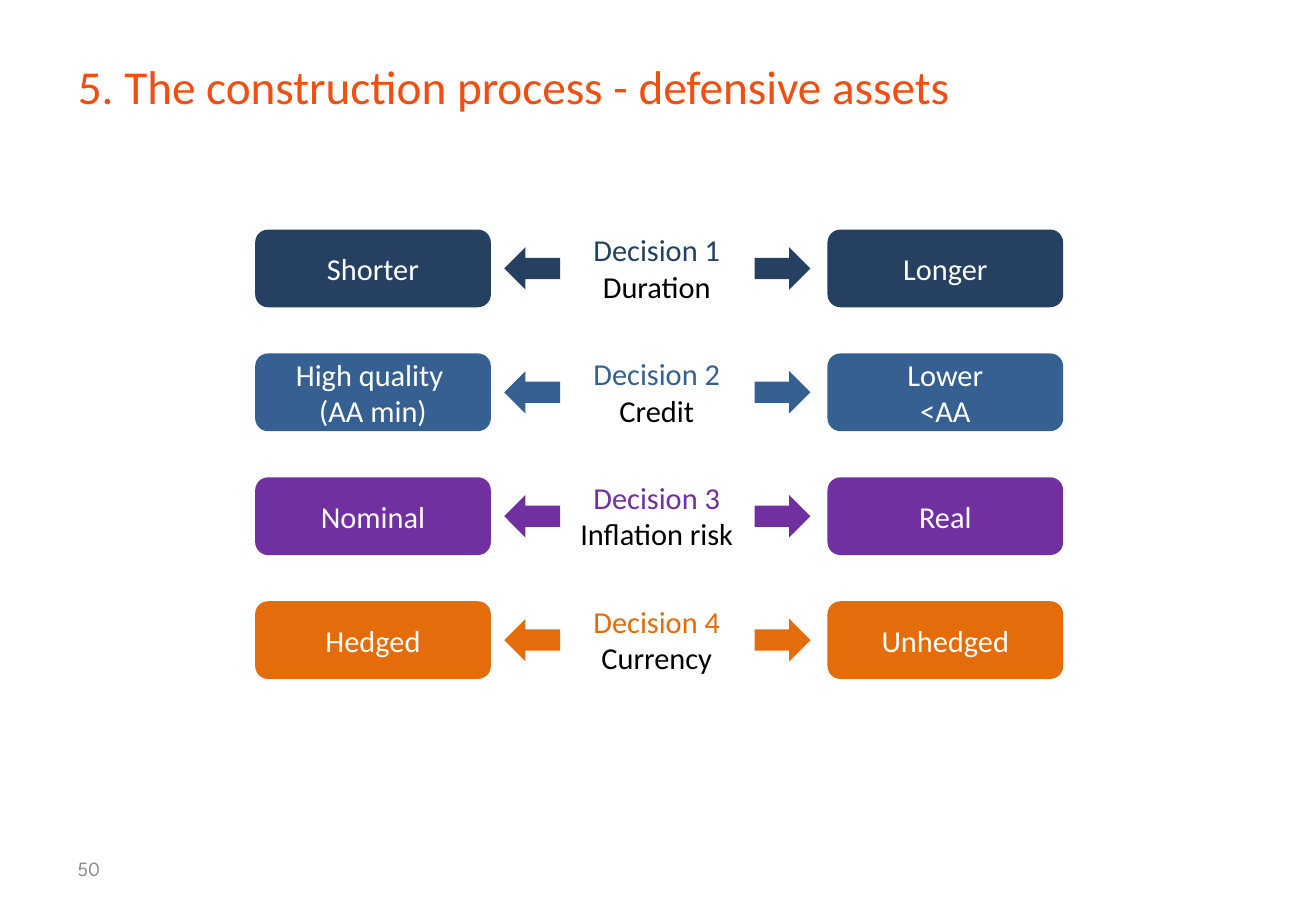
from pptx import Presentation
from pptx.dml.color import RGBColor
from pptx.enum.shapes import MSO_SHAPE
from pptx.enum.text import MSO_ANCHOR, PP_ALIGN
from pptx.util import Inches, Pt

ROUNDED = MSO_SHAPE.ROUNDED_RECTANGLE
LEFT_ARROW, RIGHT_ARROW = MSO_SHAPE.LEFT_ARROW, MSO_SHAPE.RIGHT_ARROW
MIDDLE = MSO_ANCHOR.MIDDLE
LEFT, CENTER = PP_ALIGN.LEFT, PP_ALIGN.CENTER

NAVY = RGBColor(0x25, 0x40, 0x61)
BLUE = RGBColor(0x37, 0x60, 0x92)
PURPLE = RGBColor(0x70, 0x30, 0xA0)
ORANGE = RGBColor(0xE4, 0x6C, 0x0A)
RED_ORANGE = RGBColor(0xF1, 0x4F, 0x11)
GRAY = RGBColor(0x8C, 0x8C, 0x8C)
BLACK = RGBColor(0, 0, 0)
WHITE = RGBColor(0xFF, 0xFF, 0xFF)

BODY_FONT, NUMBER_FONT = "Calibri", "League Spartan"

# Grid in inches: one row per decision
ROW_TOP, ROW_PITCH, BOX_WIDTH, BOX_HEIGHT = 1.89, 1.02, 1.94, 0.64
ARROW_WIDTH, ARROW_HEIGHT = 0.46, 0.35
LABEL_LEFT, LABEL_WIDTH, LABEL_HEIGHT = 4.67, 1.47, 0.71
MARGIN = 0.54

DECISIONS = [
    (NAVY, "Duration", ["Shorter"], ["Longer"]),
    (BLUE, "Credit", ["High quality ", "(AA min)"], ["Lower", "<AA"]),
    (PURPLE, "Inflation risk", ["Nominal"], ["Real"]),
    (ORANGE, "Currency", ["Hedged"], ["Unhedged"]),
]


def write_lines(frame, lines, colors, size=18, font=BODY_FONT, align=CENTER):
    frame.text = "\n".join(lines)
    for paragraph, color in zip(frame.paragraphs, colors):
        paragraph.alignment = align
        paragraph.font.name = font
        paragraph.font.size = Pt(size)
        paragraph.font.color.rgb = color


def add_filled(kind, left, top, width, height, color):
    shape = slide.shapes.add_shape(
        kind, Inches(left), Inches(top), Inches(width), Inches(height))
    shape.shadow.inherit = False
    shape.fill.solid()
    shape.fill.fore_color.rgb = color
    shape.line.fill.background()
    return shape


presentation = Presentation()
presentation.slide_width = Inches(10.83)
presentation.slide_height = Inches(7.5)
slide = presentation.slides.add_slide(presentation.slide_layouts[5])

# Title
title = slide.shapes.title
title.left, title.top = Inches(MARGIN), Inches(0.3)
title.width, title.height = Inches(9.75), Inches(0.81)
title.text_frame.vertical_anchor = MIDDLE
write_lines(title.text_frame, ["5. The construction process - defensive assets"],
            [RED_ORANGE], size=28, align=LEFT)

# Decision rows: box, arrow, label, arrow, box
for row, (color, topic, left_lines, right_lines) in enumerate(DECISIONS):
    top = ROW_TOP + row * ROW_PITCH
    center = top + BOX_HEIGHT / 2

    for kind, left in ((LEFT_ARROW, 4.15), (RIGHT_ARROW, 6.21)):
        add_filled(kind, left, center - ARROW_HEIGHT / 2,
                   ARROW_WIDTH, ARROW_HEIGHT, color)

    label = slide.shapes.add_textbox(
        Inches(LABEL_LEFT), Inches(center - LABEL_HEIGHT / 2),
        Inches(LABEL_WIDTH), Inches(LABEL_HEIGHT))
    write_lines(label.text_frame, [f"Decision {row + 1}", topic], [color, BLACK])

    for left, lines in ((2.1, left_lines), (6.81, right_lines)):
        box = add_filled(ROUNDED, left, top, BOX_WIDTH, BOX_HEIGHT, color)
        box.text_frame.vertical_anchor = MIDDLE
        write_lines(box.text_frame, lines, [WHITE] * len(lines))

# Page number
number = slide.shapes.add_textbox(
    Inches(MARGIN), Inches(6.95), Inches(1.89), Inches(0.4))
number.text_frame.vertical_anchor = MIDDLE
write_lines(number.text_frame, ["50"], [GRAY], size=12, font=NUMBER_FONT, align=LEFT)

presentation.save("out.pptx")
